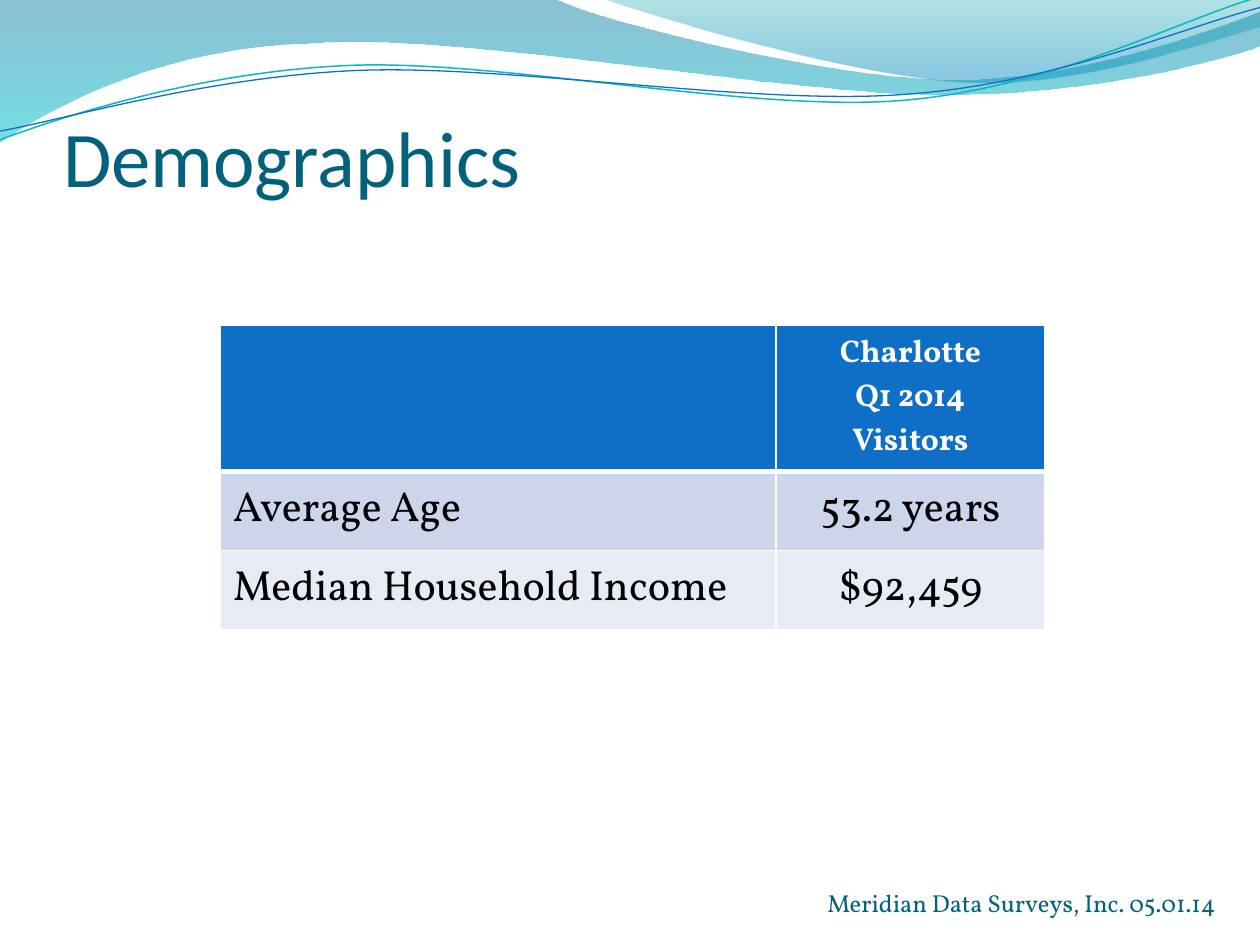
from lxml import etree
from pptx import Presentation
from pptx.dml.color import RGBColor
from pptx.enum import text
from pptx.oxml import ns
from pptx.util import Inches, Pt

BODY_FONT = "Vollkorn"
TEAL, BLUE, WHITE, BLACK = "04617B", "0F6FC6", "FFFFFF", "000000"

# Each outline: start point, then line ends (one point) or Bezier curves (three points)
LEFT_WAVE = [
    (0, 0), [(4.4, -0.01)],
    [(4.76, 0.17), (6.64, 0.63), (7.58, 0.63)],
    [(8.53, 0.63), (9.58, 0.26), (10, 0.09)], [(10.01, 0.36)],
    [(9.83, 0.44), (8.7, 0.76), (7.46, 0.75)],
    [(6.22, 0.75), (3.82, 0.28), (2.57, 0.34)],
    [(1.29, 0.36), (0.46, 0.83), (-0.01, 1.13)], [(0, 0)],
]
RIGHT_WAVE = [
    (4.79, -0.01),
    [(5.09, 0.11), (6.82, 0.62), (7.69, 0.65)],
    [(8.56, 0.69), (9.61, 0.32), (10, 0.21)], [(10, 0)], [(4.79, -0.01)],
]
TEAL_CURVE = [
    (0, 1.11),
    [(0.48, 0.93), (1.58, 0.57), (2.77, 0.52)],
    [(3.95, 0.47), (5.93, 0.89), (7.13, 0.8)],
    [(8.33, 0.71), (9.38, 0.15), (9.98, -0.02)],
]
BLUE_CURVE = [
    (0, 1.04),
    [(0.47, 0.96), (1.64, 0.61), (2.83, 0.56)],
    [(4.03, 0.51), (5.97, 0.84), (7.17, 0.75)],
    [(8.36, 0.67), (9.41, 0.21), (10, 0.06)],
]


def rgb(value):
    return RGBColor.from_string(value)


def add_outline(slide, outline, closed):
    """Build a freeform, then join each three points of a curve into one Bezier."""
    start, *segments = outline
    builder = slide.shapes.build_freeform(Inches(start[0]), Inches(start[1]))
    points = [(Inches(x), Inches(y)) for segment in segments for x, y in segment]
    builder.add_line_segments(points, close=closed)
    shape = builder.convert_to_shape()
    shape.shadow.inherit = False
    lines = iter(list(shape.element.spPr.iter(ns.qn("a:lnTo"))))
    for segment in segments:
        parts = [next(lines) for _ in segment]
        if len(parts) == 3:
            curve = etree.Element(ns.qn("a:cubicBezTo"))
            parts[0].addprevious(curve)
            for part in parts:
                curve.append(part[0])
                part.getparent().remove(part)
    return shape


def add_wave(slide, outline, stops):
    """Fill from top to bottom; each stop is position, colour and opacity in percent."""
    shape = add_outline(slide, outline, closed=True)
    shape.line.fill.background()
    shape.fill.gradient()
    shape.fill.gradient_angle = 270
    for stop, (position, color, _) in zip(shape.fill.gradient_stops, stops):
        stop.position = position / 100
        stop.color.rgb = rgb(color)
    for element, (_, _, opacity) in zip(shape.element.spPr.iter(ns.qn("a:srgbClr")), stops):
        etree.SubElement(element, ns.qn("a:alpha"), val=str(opacity * 1000))


def add_curve(slide, outline, color, width):
    shape = add_outline(slide, outline, closed=False)
    shape.fill.background()
    shape.line.color.rgb = rgb(color)
    shape.line.width = Pt(width)


def write(paragraph, lines, size, color, font=BODY_FONT, bold=False,
          align=text.PP_ALIGN.LEFT):
    paragraph.alignment = align
    for index, line in enumerate(lines.split("\n")):
        if index:
            paragraph.add_line_break()
        run = paragraph.add_run()
        run.text = line
        run.font.name = font
        run.font.size = Pt(size)
        run.font.bold = bold
        run.font.color.rgb = rgb(color)


def set_borders(cell, widths):
    """Draw white borders; widths are points for left, right, top and bottom."""
    properties = cell._tc.get_or_add_tcPr()
    for index, (side, width) in enumerate(zip("LRTB", widths)):
        border = etree.Element(ns.qn(f"a:ln{side}"), w=str(Pt(width)))
        fill = etree.SubElement(border, ns.qn("a:solidFill"))
        etree.SubElement(fill, ns.qn("a:srgbClr"), val=WHITE)
        properties.insert(index, border)


def add_title(slide, title):
    shape = slide.shapes.title
    shape.left, shape.top = Inches(0.5), Inches(0.77)
    shape.width, shape.height = Inches(9), Inches(1.25)
    frame = shape.text_frame
    frame.vertical_anchor = text.MSO_ANCHOR.BOTTOM
    frame.margin_left = frame.margin_right = 0
    frame.margin_bottom = Inches(0.41)
    write(frame.paragraphs[0], title, 45, TEAL, font="Calibri")


def add_footer(slide, footer):
    box = slide.shapes.add_textbox(Inches(6.33), Inches(7), Inches(3.42), Inches(0.34))
    box.text_frame.word_wrap = True
    write(box.text_frame.paragraphs[0], footer, 14, TEAL, align=text.PP_ALIGN.RIGHT)


def add_demographics_table(slide):
    rows = [
        ("", "Charlotte\nQ1 2014\nVisitors"),
        ("Average Age", "53.2 years"),
        ("Median Household Income", "$92,459"),
    ]
    row_fills = [BLUE, "CCD5EA", "E7EBF5"]
    table = slide.shapes.add_table(
        3, 2, Inches(1.75), Inches(2.58), Inches(6.54), Inches(2.42)).table
    for column, width in zip(table.columns, (4.41, 2.13)):
        column.width = Inches(width)
    for row, height in zip(table.rows, (1.16, 0.63, 0.63)):
        row.height = Inches(height)
    for row_index, (values, fill) in enumerate(zip(rows, row_fills)):
        header = row_index == 0
        for column_index, value in enumerate(values):
            cell = table.cell(row_index, column_index)
            cell.vertical_anchor = text.MSO_ANCHOR.MIDDLE
            cell.fill.solid()
            cell.fill.fore_color.rgb = rgb(fill)
            set_borders(cell, (1, 1, 3 if row_index == 1 else 1, 3 if header else 1))
            if value:
                write(cell.text_frame.paragraphs[0], value, 18 if header else 24,
                      WHITE if header else BLACK, bold=header,
                      align=text.PP_ALIGN.CENTER if column_index else text.PP_ALIGN.LEFT)


def main():
    presentation = Presentation()
    presentation.slide_width, presentation.slide_height = Inches(10), Inches(7.5)
    slide = presentation.slides.add_slide(presentation.slide_layouts[5])
    add_wave(slide, LEFT_WAVE, [(0, "0074A1", 45), (100, "00C6CF", 55)])
    add_wave(slide, RIGHT_WAVE, [(0, "00A1A9", 30), (80, "008BBF", 45)])
    add_curve(slide, TEAL_CURVE, "0AB8BF", 0.85)
    add_curve(slide, BLUE_CURVE, BLUE, 0.75)
    add_footer(slide, "Meridian Data Surveys, Inc. 05.01.14")
    add_title(slide, "Demographics")
    add_demographics_table(slide)
    presentation.save("out.pptx")


if __name__ == "__main__":
    main()
